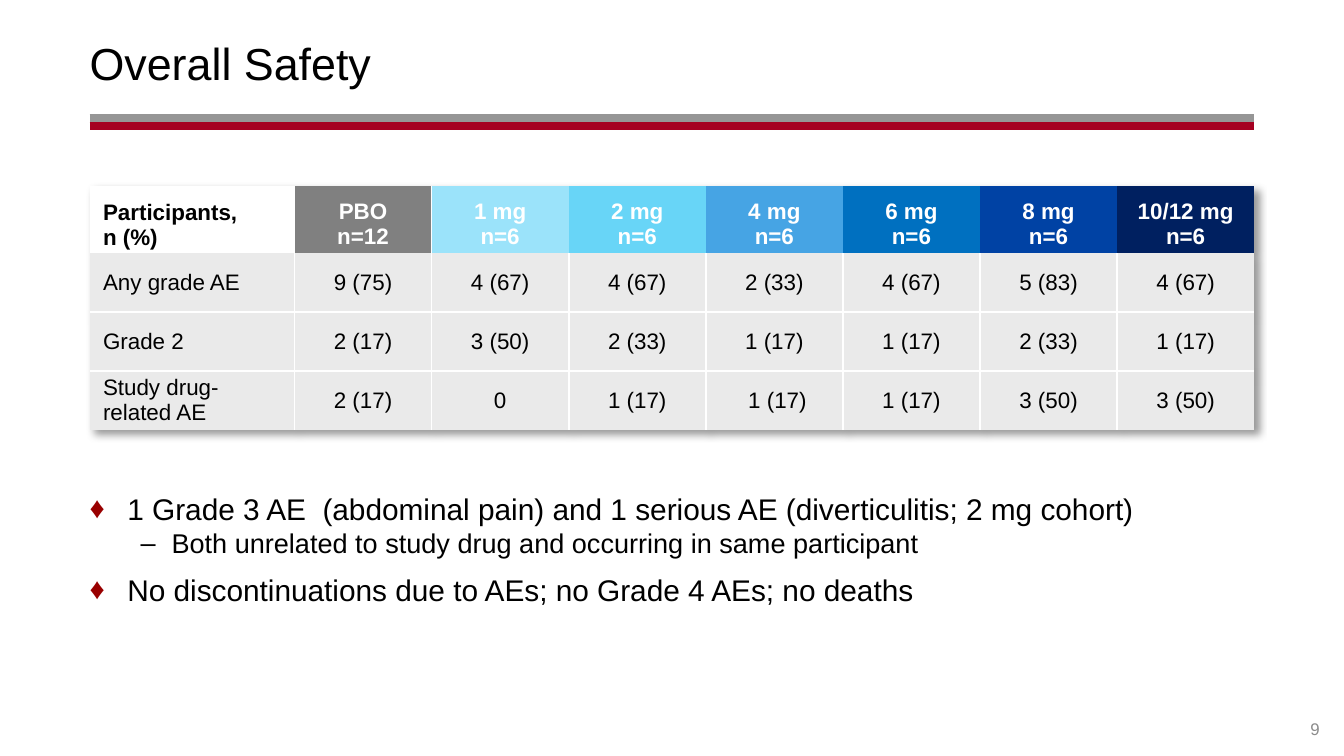
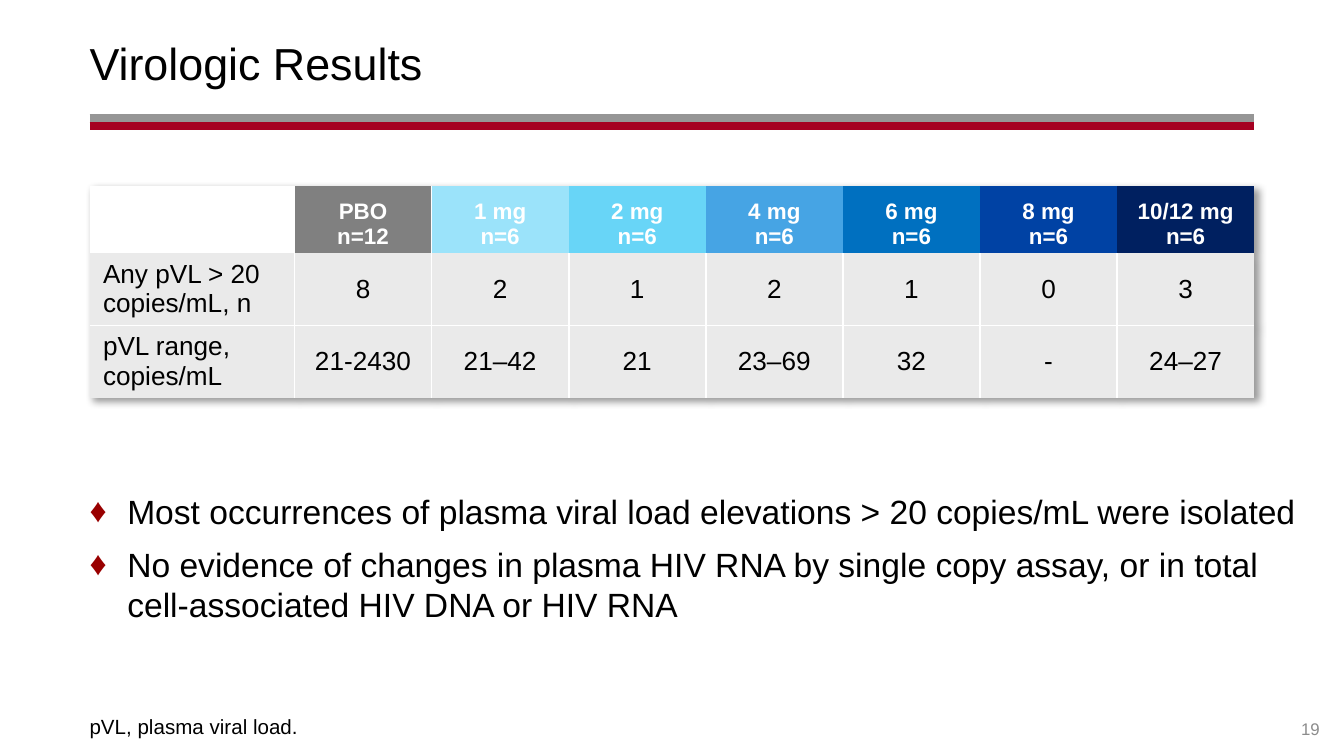
from dataclasses import dataclass

from lxml.etree import SubElement
from pptx import Presentation
from pptx.dml.color import RGBColor
from pptx.enum.shapes import MSO_CONNECTOR
from pptx.enum.text import MSO_ANCHOR, MSO_AUTO_SIZE, PP_ALIGN
from pptx.oxml import parse_xml
from pptx.oxml.ns import nsdecls, qn
from pptx.util import Pt


@dataclass(frozen=True)
class Theme:
    font: str = "Arial"
    text: str = "000000"
    white: str = "FFFFFF"
    rule_gray: str = "969696"
    rule_red: str = "A50021"
    bullet: str = "990000"
    number: str = "8C8C8C"
    cell: str = "EAEAEA"
    doses: tuple = ("808080", "9BE3FA", "68D5F7", "46A4E4", "0070C0", "0042A4", "002060")
    title_size: float = 24
    header_size: float = 12
    note_size: float = 11
    number_size: float = 9
    left: float = 48
    width: float = 624
    label_width: float = 109.8
    header_height: float = 35.8
    row_height: float = 31.6


ARMS = [("PBO", "n=12")] + [(f"{dose} mg", "n=6") for dose in ("1", "2", "4", "6", "8", "10/12")]
NO_STYLE = "{2D5ABB26-0587-4C30-8999-92F81FD0307C}"
TABLE_SHADOW = (
    f'<a:effectLst {nsdecls("a")}><a:outerShdw blurRad="50800" dist="38100" dir="2700000" '
    'algn="tl" rotWithShape="0"><a:srgbClr val="000000"><a:alpha val="40000"/></a:srgbClr>'
    "</a:outerShdw></a:effectLst>"
)


class Deck:
    def __init__(self, theme):
        self.t = theme
        self.prs = Presentation()
        self.prs.slide_width, self.prs.slide_height = Pt(720), Pt(405)
        self.s = None

    def slide(self, title, number, layout):
        t = self.t
        self.s = self.prs.slides.add_slide(self.prs.slide_layouts[layout])
        self.rule(63.2, t.rule_gray)
        self.rule(67.5, t.rule_red)
        tf = self.frame(self.s.shapes.title, (t.left, 10.2, t.width, 46.8),
                        (0, 3.6, 7.2, 3.6), MSO_ANCHOR.MIDDLE)
        self.run(tf.paragraphs[0], title, t.title_size)
        box = self.s.shapes.add_textbox(0, 0, 0, 0)
        tf = self.frame(box, (672, 374.4, 35, 21.6), (0, 0, 0, 0), MSO_ANCHOR.BOTTOM)
        self.run(tf.paragraphs[0], number, t.number_size, t.number, align=PP_ALIGN.RIGHT)

    def rule(self, y, color):
        t = self.t
        line = self.s.shapes.add_connector(
            MSO_CONNECTOR.STRAIGHT, Pt(t.left), Pt(y), Pt(t.left + t.width), Pt(y))
        line.line.color.rgb = RGBColor.from_string(color)
        line.line.width = Pt(4.25)
        SubElement(line.element.spPr, qn("a:effectLst"))

    def frame(self, sp, area, inset, anchor):
        sp.left, sp.top, sp.width, sp.height = map(Pt, area)
        tf = sp.text_frame
        tf.margin_left, tf.margin_top, tf.margin_right, tf.margin_bottom = map(Pt, inset)
        tf.vertical_anchor = anchor
        tf.word_wrap = True
        tf.auto_size = MSO_AUTO_SIZE.NONE
        return tf

    def run(self, p, text, size, color=None, bold=False, align=PP_ALIGN.LEFT, space=(0, 0)):
        p.alignment = align
        p.space_before, p.space_after = map(Pt, space)
        r = p.add_run()
        r.text = text
        r.font.name, r.font.size, r.font.bold = self.t.font, Pt(size), bold
        r.font.color.rgb = RGBColor.from_string(color or self.t.text)

    def bullets(self, items, width, height):
        sp = self.s.placeholders[1]
        tf = self.frame(sp, (self.t.left, 259.2, width, height), (0, 3.6, 7.2, 3.6), MSO_ANCHOR.TOP)
        for i, (level, text, size) in enumerate(items):
            p = tf.paragraphs[0] if i == 0 else tf.add_paragraph()
            p.level = level
            self.run(p, text, size, space=(0 if level else 6.8, 0))
            indent, hang, char, color = ((43.9, 16.6, "–", self.t.text) if level
                                         else (20.2, 20.2, "♦", self.t.bullet))
            pPr = p._p.get_or_add_pPr()
            pPr.set("marL", str(Pt(indent)))
            pPr.set("indent", str(-Pt(hang)))
            SubElement(SubElement(pPr, qn("a:buClr")), qn("a:srgbClr"), val=color)
            SubElement(pPr, qn("a:buFont"), typeface=self.t.font)
            SubElement(pPr, qn("a:buChar"), char=char)

    def note(self, text):
        tf = self.frame(self.s.placeholders[2], (self.t.left, 368.6, self.t.width, 27.4),
                        (0, 0, 0, 0), MSO_ANCHOR.BOTTOM)
        p = tf.paragraphs[0]
        self.run(p, text, self.t.note_size)
        pPr = p._p.get_or_add_pPr()
        pPr.set("marL", "0")
        pPr.set("indent", "0")
        SubElement(pPr, qn("a:buNone"))

    def cell(self, cell, lines, fill, borders, inset, anchor, **style):
        cell.fill.solid()
        cell.fill.fore_color.rgb = RGBColor.from_string(fill)
        cell.margin_left = cell.margin_right = Pt(inset[0])
        cell.margin_top = cell.margin_bottom = Pt(inset[1])
        cell.vertical_anchor = anchor
        tf = cell.text_frame
        for i, line in enumerate(lines):
            self.run(tf.paragraphs[0] if i == 0 else tf.add_paragraph(), line, **style)
        tcPr = cell._tc.get_or_add_tcPr()
        for i, side in enumerate(borders):
            tcPr.insert(i, parse_xml(
                f'<a:ln{side} {nsdecls("a")} w="{Pt(1)}"><a:solidFill>'
                f'<a:srgbClr val="{self.t.white}"/></a:solidFill></a:ln{side}>'))

    def table(self, corner, rows, size, label_inset):
        t = self.t
        n_rows, n_cols = len(rows) + 1, len(ARMS) + 1
        height = t.header_height + t.row_height * len(rows)
        tbl = self.s.shapes.add_table(
            n_rows, n_cols, Pt(t.left), Pt(99.8), Pt(t.width), Pt(height)).table
        tbl.first_row = tbl.horz_banding = False
        tblPr = tbl._tbl.tblPr
        tblPr.find(qn("a:tableStyleId")).text = NO_STYLE
        tblPr.insert(0, parse_xml(TABLE_SHADOW))
        for i, col in enumerate(tbl.columns):
            col.width = Pt((t.width - t.label_width) / len(ARMS) if i else t.label_width)
        for i, row in enumerate(tbl.rows):
            row.height = Pt(t.row_height if i else t.header_height)

        self.cell(tbl.cell(0, 0), corner, t.white, "R", (7.2, 1.4), MSO_ANCHOR.BOTTOM,
                  size=t.header_size, bold=True)
        for c, (arm, fill) in enumerate(zip(ARMS, t.doses), 1):
            self.cell(tbl.cell(0, c), arm, fill, "L" if c == 1 else "", (9.4, 2.2),
                      MSO_ANCHOR.BOTTOM, size=t.header_size, color=t.white, bold=True,
                      align=PP_ALIGN.CENTER)
        for r, values in enumerate(rows, 1):
            for c, value in enumerate(values):
                shown = {"L": c > 0, "R": c < n_cols - 1, "T": r > 1, "B": r < n_rows - 1}
                borders = [side for side, on in shown.items() if on]
                style = {"align": PP_ALIGN.CENTER, "space": (3, 3)} if c else {}
                self.cell(tbl.cell(r, c), [value], t.cell, borders,
                          (5, 0) if c else (7.2, label_inset), MSO_ANCHOR.MIDDLE,
                          size=size, **style)


def main():
    deck = Deck(Theme())

    deck.slide("Overall Safety", "9", layout=1)
    deck.bullets([
        (0, "1 Grade 3 AE  (abdominal pain) and 1 serious AE (diverticulitis; 2 mg cohort)", 16),
        (1, "Both unrelated to study drug and occurring in same participant", 14.5),
        (0, "No discontinuations due to AEs; no Grade 4 AEs; no deaths", 16),
    ], 624, 82)
    deck.table(["Participants,", "n (%)"], [
        ["Any grade AE", "9 (75)", "4 (67)", "4 (67)", "2 (33)", "4 (67)", "5 (83)", "4 (67)"],
        ["Grade 2", "2 (17)", "3 (50)", "2 (33)", "1 (17)", "1 (17)", "2 (33)", "1 (17)"],
        ["Study drug-related AE", "2 (17)", "0", "1 (17)", " 1 (17)", "1 (17)", "3 (50)", "3 (50)"],
    ], 12, 1.4)

    deck.slide("Virologic Results", "19", layout=3)
    deck.bullets([
        (0, "Most occurrences of plasma viral load elevations > 20 copies/mL were isolated", 18),
        (0, "No evidence of changes in plasma HIV RNA by single copy assay, or in total "
            "cell-associated HIV DNA or HIV RNA", 18),
    ], 659, 93.6)
    deck.note("pVL, plasma viral load.")
    deck.table([], [
        ["Any pVL > 20 copies/mL, n", "8", "2", "1", "2", "1", "0", "3"],
        ["pVL range, copies/mL", "21-2430", "21–42", "21", "23–69", "32", "-", "24–27"],
    ], 14, 3.6)

    deck.prs.save("out.pptx")


if __name__ == "__main__":
    main()
